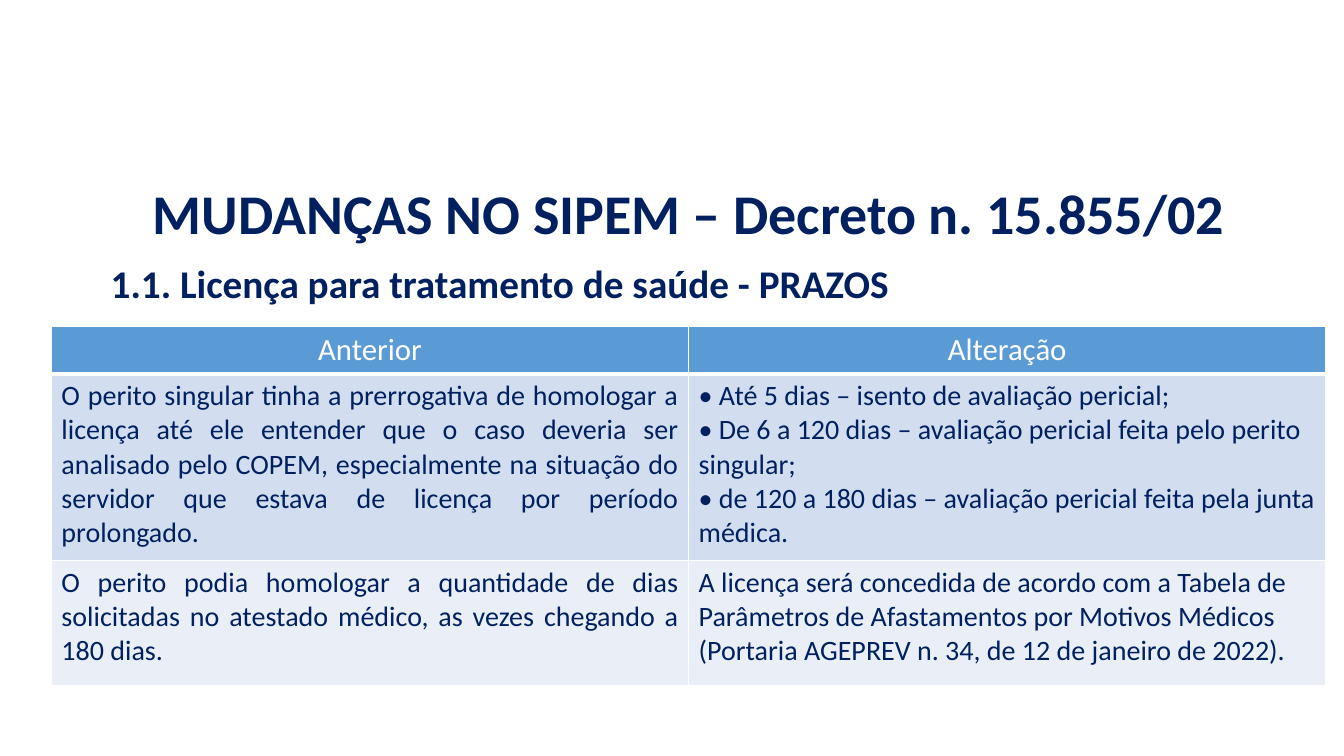
from dataclasses import dataclass

from lxml.etree import SubElement
from pptx import Presentation
from pptx.dml.color import RGBColor
from pptx.enum.text import MSO_ANCHOR, PP_ALIGN
from pptx.oxml.ns import qn
from pptx.slide import Slide
from pptx.table import _Cell
from pptx.text.text import TextFrame
from pptx.util import Inches, Pt

FONT = "Calibri"
NAVY = "002060"
WHITE = "FFFFFF"
COLUMN_WIDTH = 6.32


@dataclass(frozen=True)
class TextStyle:
    size: float
    color: str = NAVY
    bold: bool = False
    line_spacing: float = 1.0


@dataclass(frozen=True)
class Heading:
    text: str
    left: float
    top: float
    width: float
    height: float
    style: TextStyle
    alignment: PP_ALIGN
    anchor: MSO_ANCHOR


@dataclass(frozen=True)
class ComparisonRow:
    height: float
    fill: str
    previous: list[str]
    change: list[str]
    style: TextStyle = TextStyle(20)
    alignments: tuple[PP_ALIGN, PP_ALIGN] = (PP_ALIGN.JUSTIFY, PP_ALIGN.LEFT)
    anchor: MSO_ANCHOR = MSO_ANCHOR.TOP
    top_border: float = 1
    bottom_border: float = 1


HEADINGS = [
    Heading("MUDANÇAS NO SIPEM – Decreto n. 15.855/02", 1, 1.72, 11.66, 0.85,
            TextStyle(40, bold=True, line_spacing=0.9), PP_ALIGN.CENTER, MSO_ANCHOR.MIDDLE),
    Heading("1.1. Licença para tratamento de saúde - PRAZOS", 1, 2.58, 11.33, 4.19,
            TextStyle(28, bold=True, line_spacing=0.9), PP_ALIGN.LEFT, MSO_ANCHOR.TOP),
]

ROWS = [
    ComparisonRow(0.47, "5B9BD5", ["Anterior"], ["Alteração"], TextStyle(22, WHITE),
                  (PP_ALIGN.CENTER, PP_ALIGN.CENTER), MSO_ANCHOR.MIDDLE, bottom_border=3),
    ComparisonRow(
        1.85, "D2DEEF",
        ["O perito singular tinha a prerrogativa de homologar a licença até ele entender "
         "que o caso deveria ser analisado pelo COPEM, especialmente na situação do "
         "servidor que estava de licença por período prolongado."],
        ["• Até 5 dias – isento de avaliação pericial;",
         "• De 6 a 120 dias – avaliação pericial feita pelo perito singular;",
         "• de 120 a 180 dias – avaliação pericial feita pela junta médica."],
        top_border=3),
    ComparisonRow(
        1.24, "EAEFF7",
        ["O perito podia homologar a quantidade de dias solicitadas no atestado médico, "
         "as vezes chegando a 180 dias."],
        ["A licença será concedida de acordo com a Tabela de Parâmetros de Afastamentos "
         "por Motivos Médicos (Portaria AGEPREV n. 34, de 12 de janeiro de 2022)."]),
]


def color_of(value: str) -> RGBColor:
    return RGBColor.from_string(value)


def write_text(frame: TextFrame, lines: list[str], style: TextStyle, alignment: PP_ALIGN) -> None:
    frame.word_wrap = True
    for index, line in enumerate(lines):
        para = frame.add_paragraph() if index else frame.paragraphs[0]
        para.alignment = alignment
        para.line_spacing = style.line_spacing
        span = para.add_run()
        span.text = line
        span.font.name = FONT
        span.font.size = Pt(style.size)
        span.font.bold = style.bold
        span.font.color.rgb = color_of(style.color)


def add_heading(page: Slide, heading: Heading) -> None:
    box = page.shapes.add_textbox(Inches(heading.left), Inches(heading.top),
                                  Inches(heading.width), Inches(heading.height))
    box.text_frame.vertical_anchor = heading.anchor
    write_text(box.text_frame, [heading.text], heading.style, heading.alignment)


def set_borders(cell: _Cell, top: float, bottom: float) -> None:
    properties = cell._tc.get_or_add_tcPr()
    for side, width in (("lnL", 1), ("lnR", 1), ("lnT", top), ("lnB", bottom)):
        line = SubElement(properties, qn(f"a:{side}"), w=str(Pt(width)))
        fill = SubElement(line, qn("a:solidFill"))
        SubElement(fill, qn("a:srgbClr"), val=WHITE)


def add_comparison(page: Slide, rows: list[ComparisonRow]) -> None:
    height = sum(row.height for row in rows)
    table = page.shapes.add_table(len(rows), 2, Inches(0.51), Inches(3.24),
                                  Inches(2 * COLUMN_WIDTH), Inches(height)).table
    for column in table.columns:
        column.width = Inches(COLUMN_WIDTH)
    for row_index, row in enumerate(rows):
        table.rows[row_index].height = Inches(row.height)
        for column_index, lines in enumerate((row.previous, row.change)):
            cell = table.cell(row_index, column_index)
            set_borders(cell, row.top_border, row.bottom_border)
            cell.fill.solid()
            cell.fill.fore_color.rgb = color_of(row.fill)
            cell.vertical_anchor = row.anchor
            write_text(cell.text_frame, lines, row.style, row.alignments[column_index])


def main() -> None:
    deck = Presentation()
    deck.slide_width = Inches(13.33)
    deck.slide_height = Inches(7.5)
    page = deck.slides.add_slide(deck.slide_layouts[6])
    for heading in HEADINGS:
        add_heading(page, heading)
    add_comparison(page, ROWS)
    deck.save("out.pptx")


if __name__ == "__main__":
    main()
